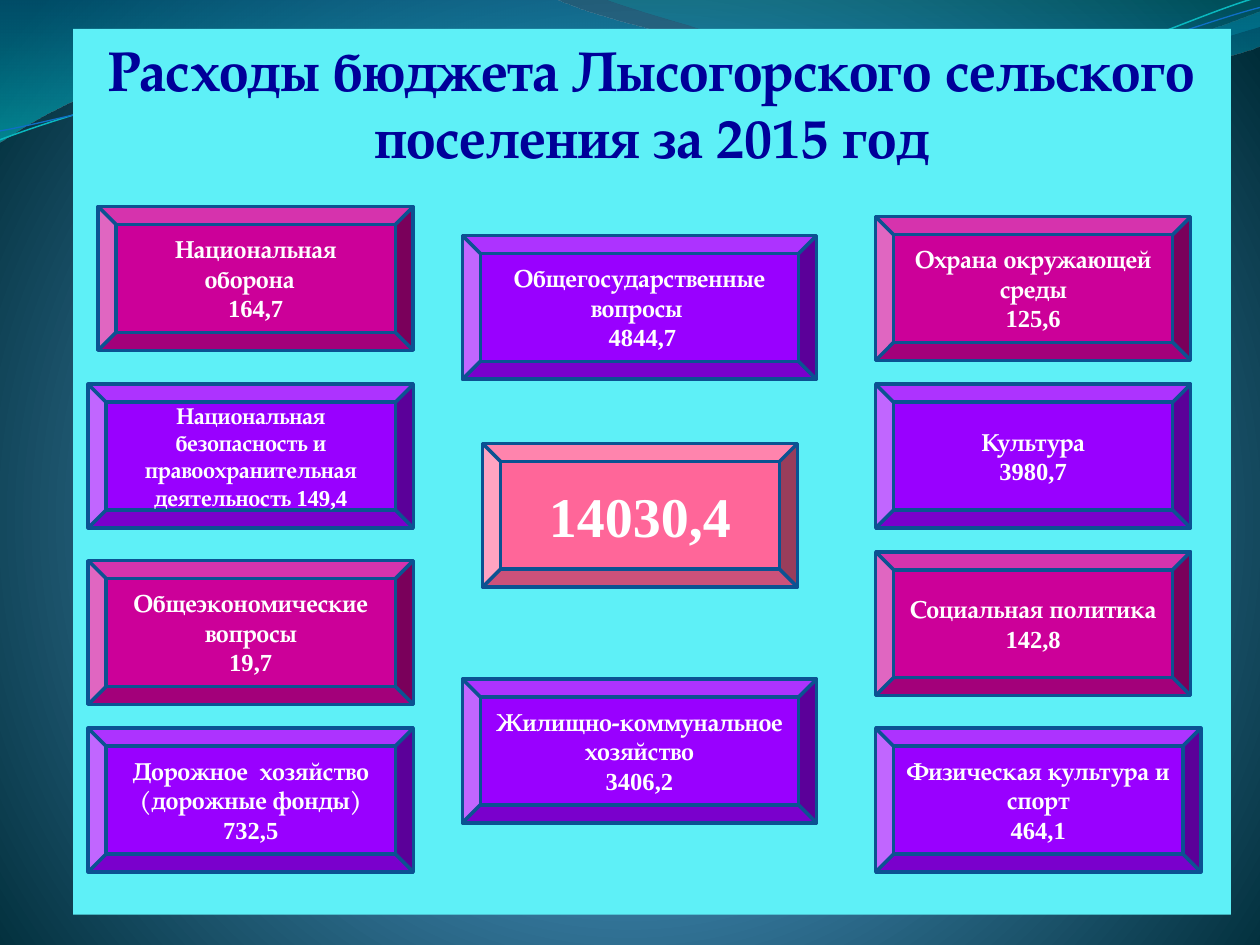
from dataclasses import dataclass
from math import cos, radians, sin
from lxml import etree
from pptx import Presentation
from pptx.dml.color import RGBColor
from pptx.enum.shapes import MSO_SHAPE as Shape
from pptx.enum.text import MSO_ANCHOR as Anchor, PP_ALIGN as Align
from pptx.oxml.ns import qn
from pptx.util import Inches, Pt


@dataclass(frozen=True)
class Theme:
    panel: str = "5EF0F7"
    title: str = "000099"
    magenta: str = "CC0099"
    violet: str = "9900FF"
    pink: str = "FF6699"
    edge: str = "0B5292"
    text: str = "FFFFFF"
    font: str = "TeX Gyre Pagella"
    number_font: str = "Times New Roman"
    big: float = 32
    body: float = 14
    small: float = 13


THEME = Theme()
TILE_HEIGHT = 1.14
NARROW, MEDIUM, WIDE = 2.5, 2.58, 2.81
TILT = 2.7

# Each tile: left, top, width, fill, label, value
LEFT_TILES = [
    (0.78, 1.64, NARROW, THEME.magenta, "Национальная оборона  ", "164,7"),
    (0.7, 4.45, MEDIUM, THEME.magenta, "Общеэкономические вопросы", "19,7"),
    (0.7, 5.78, MEDIUM, THEME.violet, "Дорожное  хозяйство (дорожные фонды)", "732,5"),
]
CENTRE_TILES = [
    (3.67, 1.87, WIDE, THEME.violet, "Общегосударственные вопросы ", " 4844,7"),
    (3.67, 5.39, WIDE, THEME.violet, "Жилищно-коммунальное хозяйство", "3406,2"),
]
RIGHT_TILES = [
    (6.95, 1.72, NARROW, THEME.magenta, "Охрана окружающей среды", "125,6"),
    (6.95, 3.05, NARROW, THEME.violet, "Культура", "3980,7"),
    (6.95, 4.38, NARROW, THEME.magenta, "Социальная политика", "142,8"),
    (6.95, 5.78, MEDIUM, THEME.violet, "Физическая культура и спорт", "464,1"),
]

# Waves: a start point, then lines (one point) and cubic curves (three points)
BROAD_WAVE = [
    [(0, 0)], [(4.4, -0.01)],
    [(4.76, 0.17), (6.64, 0.63), (7.58, 0.63)],
    [(8.53, 0.63), (9.58, 0.26), (10, 0.09)], [(10.01, 0.36)],
    [(9.83, 0.44), (8.7, 0.76), (7.46, 0.75)],
    [(6.22, 0.75), (3.82, 0.28), (2.57, 0.34)],
    [(1.29, 0.36), (0.46, 0.83), (-0.01, 1.13)], [(0, 0)],
]
TOP_WAVE = [
    [(4.79, -0.01)],
    [(5.09, 0.11), (6.82, 0.62), (7.69, 0.65)],
    [(8.56, 0.69), (9.61, 0.32), (10, 0.21)], [(10, 0)], [(4.79, -0.01)],
]
TEAL_LINE = [
    [(0, 1.11)],
    [(0.48, 0.93), (1.58, 0.57), (2.77, 0.52)],
    [(3.95, 0.47), (5.93, 0.89), (7.13, 0.8)],
    [(8.33, 0.71), (9.38, 0.15), (9.98, -0.02)],
]
BLUE_LINE = [
    [(0, 1.04)],
    [(0.47, 0.96), (1.64, 0.61), (2.83, 0.56)],
    [(4.03, 0.51), (5.97, 0.84), (7.17, 0.75)],
    [(8.36, 0.67), (9.41, 0.21), (10, 0.06)],
]


def color(value):
    return RGBColor.from_string(value)


def set_gradient(fill, element, stops, centre=None):
    """Fill with (position, colour, opacity) stops, downwards or around centre."""
    fill.solid()
    solid = element.find(".//" + qn("a:solidFill"))
    gradient = etree.Element(qn("a:gradFill"), rotWithShape="1")
    stop_list = etree.SubElement(gradient, qn("a:gsLst"))
    for position, value, opacity in stops:
        stop = etree.SubElement(stop_list, qn("a:gs"), pos=str(position * 1000))
        tint = etree.SubElement(stop, qn("a:srgbClr"), val=value)
        if opacity < 100:
            etree.SubElement(tint, qn("a:alpha"), val=str(opacity * 1000))
    if centre:
        circle = etree.SubElement(gradient, qn("a:path"), path="circle")
        sides = {side: str(size * 1000) for side, size in zip("ltrb", centre)}
        etree.SubElement(circle, qn("a:fillToRect"), **sides)
    else:
        etree.SubElement(gradient, qn("a:lin"), ang="5400000", scaled="1")
    solid.getparent().replace(solid, gradient)


def turn(outline, degrees):
    """Turn an outline clockwise about the middle of its end points."""
    (x0, y0), (x1, y1) = outline[0][0], outline[-1][-1]
    mid_x, mid_y = (x0 + x1) / 2, (y0 + y1) / 2
    c, s = cos(radians(degrees)), sin(radians(degrees))
    return [
        [(mid_x + (x - mid_x) * c - (y - mid_y) * s,
          mid_y + (x - mid_x) * s + (y - mid_y) * c) for x, y in segment]
        for segment in outline
    ]


def add_wave(slide, outline, close):
    """Build the outline through its knots, then bend its lines into curves."""
    knots = [(Inches(x), Inches(y)) for x, y in (segment[-1] for segment in outline)]
    builder = slide.shapes.build_freeform(*knots[0])
    builder.add_line_segments(knots[1:], close=close)
    wave = builder.convert_to_shape()
    wave.shadow.inherit = False
    lines = wave.element.findall(".//" + qn("a:lnTo"))
    for line, segment in zip(lines, outline[1:]):
        if len(segment) == 3:
            curve = etree.Element(qn("a:cubicBezTo"))
            for x, y in segment:
                etree.SubElement(curve, qn("a:pt"), x=str(Inches(x) - wave.left),
                                 y=str(Inches(y) - wave.top))
            line.getparent().replace(line, curve)
    return wave


def add_backdrop(slide):
    background = slide.background.fill
    background.solid()
    set_gradient(background, slide.element.find(".//" + qn("p:bgPr")),
                 [(0, "4AA0D6", 100), (25, "4C98C7", 100), (100, "002C38", 100)],
                 centre=(10, 110, 10, 100))
    for outline, stops in (
        (BROAD_WAVE, [(0, "0074A1", 45), (100, "00C6CF", 55)]),
        (TOP_WAVE, [(0, "00A1A9", 30), (80, "008BBF", 45)]),
    ):
        wave = add_wave(slide, outline, close=True)
        set_gradient(wave.fill, wave.element.spPr, stops)
        wave.line.fill.background()
    for outline, value, width in ((TEAL_LINE, "0AB8BF", 0.85), (BLUE_LINE, "0F6FC6", 0.75)):
        wave = add_wave(slide, turn(outline, TILT), close=False)
        wave.rotation = 360 - TILT
        wave.fill.background()
        wave.line.color.rgb = color(value)
        wave.line.width = Pt(width)


def add_block(slide, kind, box, fill):
    block = slide.shapes.add_shape(kind, *(Inches(length) for length in box))
    block.shadow.inherit = False
    block.fill.solid()
    block.fill.fore_color.rgb = color(fill)
    block.text_frame.word_wrap = True
    return block


def style_span(span, size, font, value):
    span.font.size = Pt(size)
    span.font.name = font
    span.font.bold = True
    span.font.color.rgb = color(value)


def add_title_panel(slide, box):
    panel = add_block(slide, Shape.RECTANGLE, box, THEME.panel)
    panel.line.fill.background()
    frame = panel.text_frame
    frame.vertical_anchor = Anchor.TOP
    frame.margin_left = frame.margin_right = Inches(0.05)
    frame.margin_top = frame.margin_bottom = Inches(0.05)
    frame.text = "Расходы бюджета Лысогорского сельского поселения за 2015 год"
    para = frame.paragraphs[0]
    para.alignment = Align.CENTER
    para.space_before = Pt(THEME.big * 0.2)
    style_span(para.runs[0], THEME.big, THEME.font, THEME.title)


def add_tile(slide, box, fill, lines, size=THEME.body):
    """Draw a bevelled tile; each line is a list of (text, font) spans."""
    tile = add_block(slide, Shape.BEVEL, box, fill)
    tile.line.color.rgb = color(THEME.edge)
    tile.line.width = Pt(2)
    frame = tile.text_frame
    frame.vertical_anchor = Anchor.MIDDLE
    for index, spans in enumerate(lines):
        para = frame.add_paragraph() if index else frame.paragraphs[0]
        para.alignment = Align.CENTER
        for text, font in spans:
            span = para.add_run()
            span.text = text
            style_span(span, size, font, THEME.text)


def build():
    deck = Presentation()
    deck.slide_width, deck.slide_height = Inches(10), Inches(7.5)
    slide = deck.slides.add_slide(deck.slide_layouts[6])
    add_backdrop(slide)
    add_title_panel(slide, (0.58, 0.23, 9.19, 7.03))
    for left, top, width, fill, label, value in LEFT_TILES + CENTRE_TILES + RIGHT_TILES:
        add_tile(slide, (left, top, width, TILE_HEIGHT), fill,
                 [[(label, THEME.font)], [(value, THEME.number_font)]])
    security = "Национальная безопасность и правоохранительная деятельность "
    add_tile(slide, (0.7, 3.05, MEDIUM, TILE_HEIGHT), THEME.violet,
             [[(security, THEME.font), ("149,4", THEME.number_font)]], THEME.small)
    add_tile(slide, (3.83, 3.52, NARROW, TILE_HEIGHT), THEME.pink,
             [[("14030,4", THEME.number_font)]], THEME.big)
    deck.save("out.pptx")


if __name__ == "__main__":
    build()
